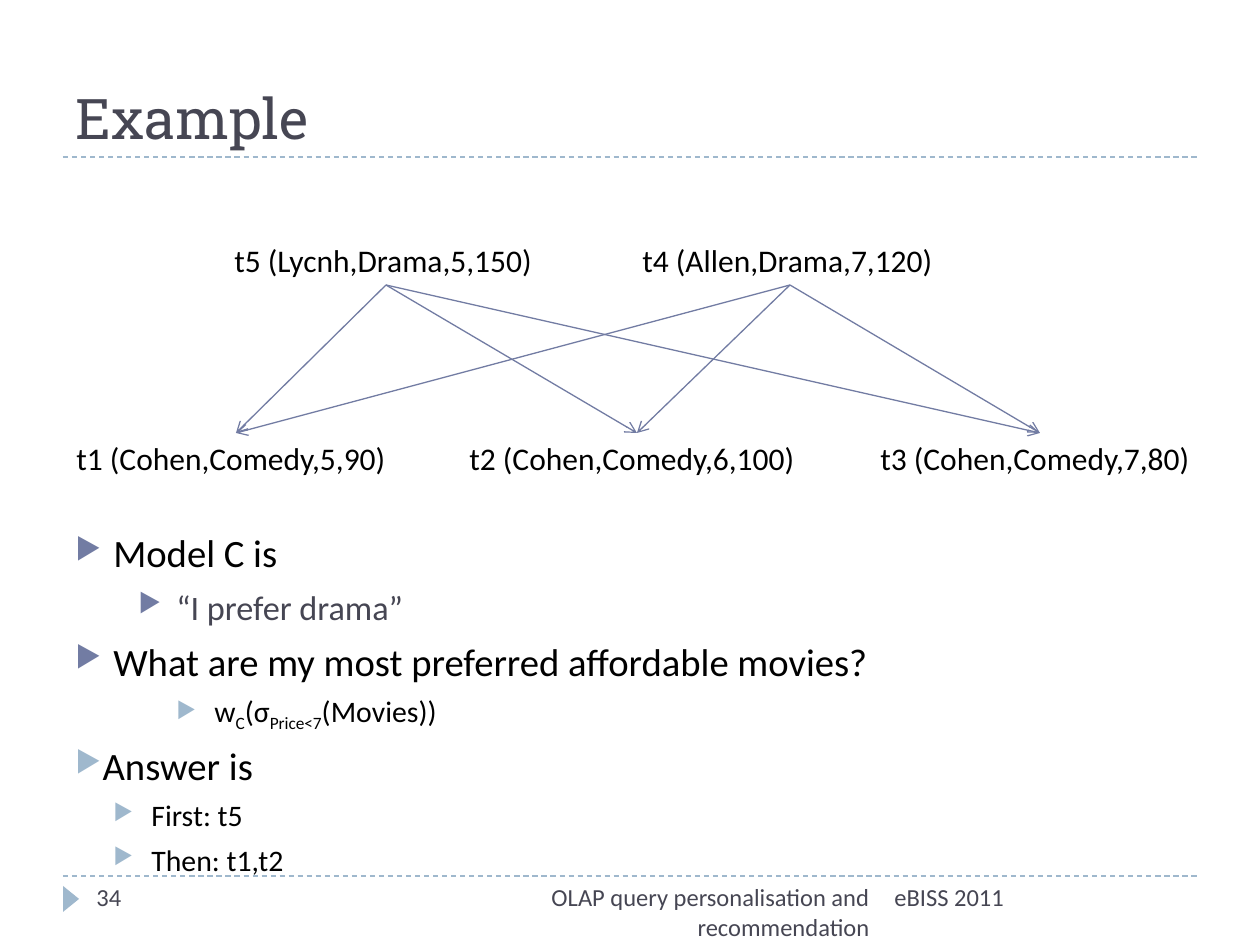
import pptx
import pptx.util
import pptx.dml.color
import pptx.enum.dml
import pptx.enum.shapes
import pptx.enum.text
import pptx.oxml
import pptx.oxml.ns

COLORS = {"ink": "000000", "slate": "464653", "indigo": "727CA3", "sky": "9FB8CD"}
PX = 914400 // 126
TEXT_HEIGHT = 50

TITLE = ("Example", (63, 21, 1134, 136))
RULES = [157, 876]
RULE_ENDS = (63, 1197)
MARKER = (58, 891, 26, 16)

FOOTERS = [
    ("34", 84, 273, "LEFT"),
    ("OLAP query personalisation and recommendation", 399, 483, "RIGHT"),
    ("eBISS 2011", 882, 315, "LEFT"),
]
FOOTER_TOP = 876

PREFERRED = [
    ("t5 (Lycnh,Drama,5,150)", 222, 329),
    ("t4 (Allen,Drama,7,120)", 630, 321),
]
OTHERS = [
    ("t1 (Cohen,Comedy,5,90)", 64, 345),
    ("t2 (Cohen,Comedy,6,100)", 457, 360),
    ("t3 (Cohen,Comedy,7,80)", 868, 345),
]
PREFERRED_TOP, OTHERS_TOP = 235, 433

BODY = (63, 532, 1172, 316)
FORMULA = [("w", 0), ("C", -25), ("(σ", 0), ("Price<7", -25), ("(Movies))", 0)]
POINTS = [
    (0, 38, 22.1, 6, "ink", "indigo", [("Model C is", 0)]),
    (1, 101, 19.6, 6, "slate", "indigo", [("“I prefer drama”", 0)]),
    (0, 38, 22.1, 6, "ink", "indigo",
     [("What are my most preferred affordable movies?", 0)]),
    (2, 139, 17, 5, "ink", "sky", FORMULA),
    (0, 13, 22.1, 5, "ink", "sky", [("Answer is", 0)]),
    (1, 76, 17, 5, "ink", "sky", [("First: t5", 0)]),
    (1, 76, 17, 5, "ink", "sky", [("Then: t1,t2", 0)]),
]
HANGING = 38


def px(*lengths):
    return [pptx.util.Emu(length * PX) for length in lengths]


def rgb(name):
    return pptx.dml.color.RGBColor.from_string(COLORS[name])


def add_span(para, text, size, color, font="Calibri"):
    span = para.add_run()
    span.text = text
    span.font.size = pptx.util.Pt(size)
    span.font.name = font
    span.font.color.rgb = rgb(color)
    return span


def add_label(page, text, place, size, color, align="LEFT", wrap=True):
    box = page.shapes.add_textbox(*px(*place))
    box.text_frame.word_wrap = wrap
    para = box.text_frame.paragraphs[0]
    para.alignment = getattr(pptx.enum.text.PP_ALIGN, align)
    add_span(para, text, size, color)


def add_line(page, start, end, color):
    line = page.shapes.add_connector(
        pptx.enum.shapes.MSO_CONNECTOR.STRAIGHT, *px(*start, *end))
    line.line.color.rgb = rgb(color)
    line.line.width = pptx.util.Pt(0.75)
    pptx.oxml.ns.qn("a:effectLst")
    line._element.spPr.append(pptx.oxml.parse_xml(
        f"<a:effectLst {pptx.oxml.ns.nsdecls('a')}/>"))
    return line


def add_arrow(page, start, end):
    arrow = add_line(page, start, end, "indigo")
    arrow.line._get_or_add_ln().append(pptx.oxml.parse_xml(
        f"<a:tailEnd {pptx.oxml.ns.nsdecls('a')} type='arrow'/>"))


def set_bullet(para, left, color):
    props = para._p.get_or_add_pPr()
    props.set("marL", str(left * PX))
    props.set("indent", str(-HANGING * PX))
    names = pptx.oxml.ns.nsdecls("a")
    for part in (
        f"<a:buClr {names}><a:srgbClr val='{COLORS[color]}'/></a:buClr>",
        f"<a:buSzPct {names} val='76000'/>",
        f"<a:buChar {names} char='▶'/>",
    ):
        props.append(pptx.oxml.parse_xml(part))


def add_points(page):
    box = page.shapes.add_textbox(*px(*BODY))
    frame = box.text_frame
    frame.word_wrap = True
    for index, (level, left, size, before, color, bullet, spans) in enumerate(POINTS):
        para = frame.add_paragraph() if index else frame.paragraphs[0]
        para.level = level
        if index == 0:
            para.line_spacing = 0.8
        para.space_before = pptx.util.Pt(before)
        set_bullet(para, left, bullet)
        for text, baseline in spans:
            span = add_span(para, text, size, color)
            if baseline:
                span.font._element.set("baseline", str(baseline * 1000))


def add_frame(page):
    for top in RULES:
        rule = add_line(page, (RULE_ENDS[0], top), (RULE_ENDS[1], top), "sky")
        rule.line.dash_style = pptx.enum.dml.MSO_LINE.DASH
    marker = page.shapes.add_shape(
        pptx.enum.shapes.MSO_SHAPE.ISOSCELES_TRIANGLE, *px(*MARKER))
    marker.rotation = 90
    marker.shadow.inherit = False
    marker.fill.solid()
    marker.fill.fore_color.rgb = rgb("sky")
    marker.line.fill.background()
    for text, left, width, align in FOOTERS:
        add_label(page, text, (left, FOOTER_TOP, width, TEXT_HEIGHT), 14, "slate", align)


def add_title(page):
    text, place = TITLE
    title = page.shapes.title
    title.left, title.top, title.width, title.height = px(*place)
    frame = title.text_frame
    frame.vertical_anchor = pptx.enum.text.MSO_ANCHOR.BOTTOM
    para = frame.paragraphs[0]
    para.alignment = pptx.enum.text.PP_ALIGN.LEFT
    add_span(para, text, 32, "slate", "Roboto Slab")


def add_graph(page):
    for row, top in ((PREFERRED, PREFERRED_TOP), (OTHERS, OTHERS_TOP)):
        for text, left, width in row:
            add_label(page, text, (left, top, width, TEXT_HEIGHT), 18, "ink", wrap=False)
    for _, left, width in PREFERRED:
        start = (left + width // 2, PREFERRED_TOP + TEXT_HEIGHT)
        for _, other_left, other_width in OTHERS:
            add_arrow(page, start, (other_left + other_width // 2, OTHERS_TOP))


def main():
    deck = pptx.Presentation()
    deck.slide_width, deck.slide_height = px(1260, 945)
    page = deck.slides.add_slide(deck.slide_layouts.get_by_name("Title Only"))
    add_frame(page)
    add_title(page)
    add_points(page)
    add_graph(page)
    deck.save("out.pptx")


if __name__ == "__main__":
    main()
